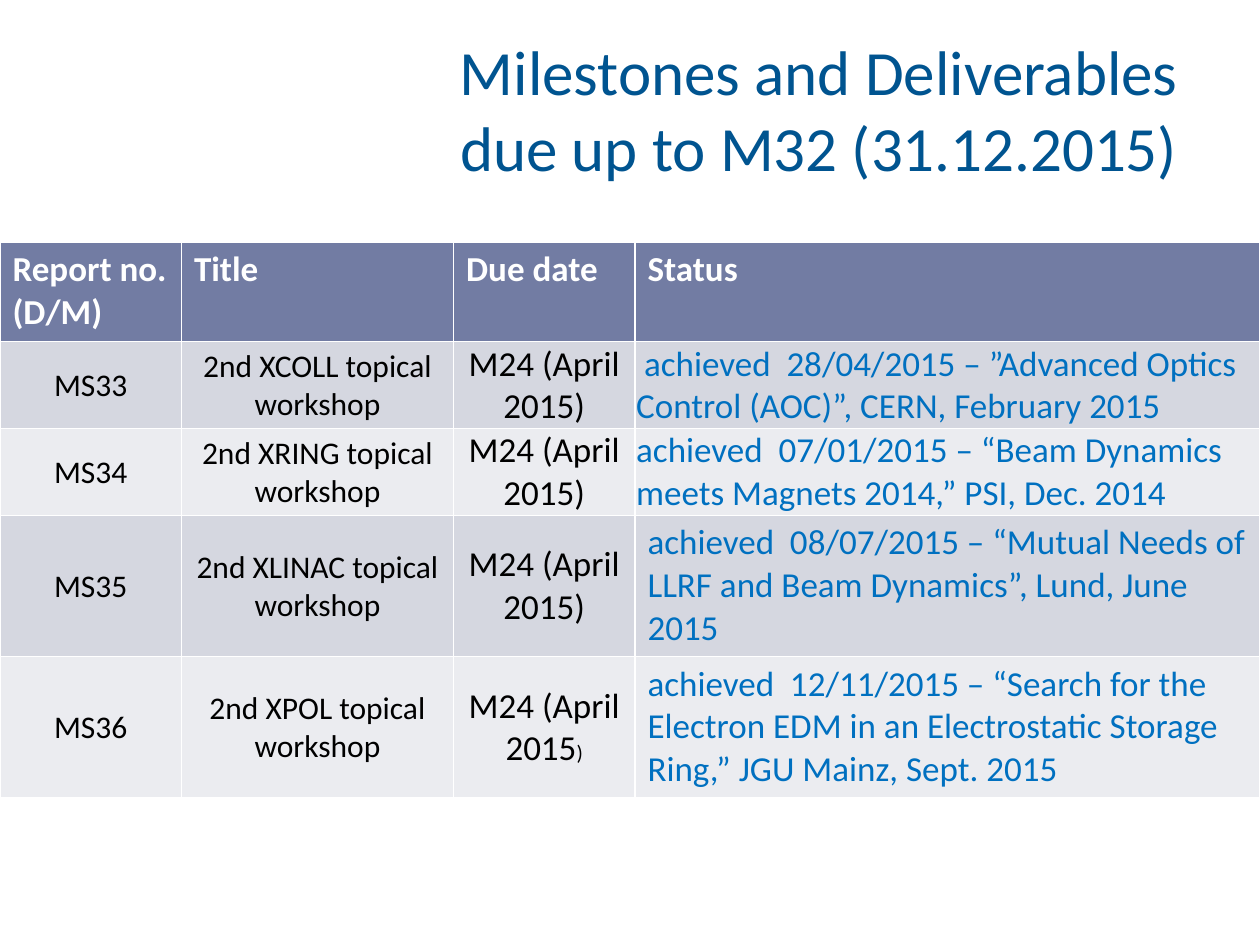
from dataclasses import dataclass

from pptx import Presentation
from pptx.dml.color import RGBColor
from pptx.enum.text import MSO_ANCHOR as Anchor, PP_ALIGN as Align
from pptx.util import Inches, Pt

FONT = "Calibri"
HEADINGS = ["Report no. (D/M)", "Title", "Due date", "Status"]
COLUMN_WIDTHS = [1.44, 2.16, 1.44, 4.96]
HEADER_HEIGHT = 0.79
HEADER_FILL = "727CA3"
BAND_FILLS = ["D5D7E0", "EBECF0"]


@dataclass
class Milestone:
    number: str
    workshop: str
    status: str
    height: float
    compact: bool = False
    closing_size: int = 20


@dataclass
class TextStyle:
    size: int
    color: str
    bold: bool = False
    align: Align = Align.LEFT


TITLE = TextStyle(36, "005490", align=Align.CENTER)
HEADING = TextStyle(20, "FFFFFF", bold=True)
LABEL = TextStyle(18, "000000", align=Align.CENTER)
DUE_DATE = TextStyle(20, "000000", align=Align.CENTER)
STATUS = TextStyle(20, "0070C0")

MILESTONES = [
    Milestone("MS33", "XCOLL",
              " achieved  28/04/2015 – ”Advanced Optics Control (AOC)”, "
              "CERN, February 2015", 0.69, compact=True),
    Milestone("MS34", "XRING",
              "achieved  07/01/2015 – “Beam Dynamics meets Magnets 2014,” "
              "PSI, Dec. 2014", 0.69, compact=True),
    Milestone("MS35", "XLINAC",
              "achieved  08/07/2015 – “Mutual Needs of LLRF and Beam Dynamics”, "
              "Lund, June 2015", 1.12),
    Milestone("MS36", "XPOL",
              "achieved  12/11/2015 – “Search for the Electron EDM in an "
              "Electrostatic Storage Ring,” JGU Mainz, Sept. 2015", 1.12,
              closing_size=12),
]


def rgb(color: str) -> RGBColor:
    return RGBColor.from_string(color)


def write(text_frame, text: str, style: TextStyle):
    paragraph = text_frame.paragraphs[0]
    paragraph.add_run().text = text
    paragraph.alignment = style.align
    font = paragraph.font
    font.name = FONT
    font.size = Pt(style.size)
    font.bold = style.bold
    font.color.rgb = rgb(style.color)
    for run in paragraph.runs:
        run.font.color.rgb = rgb(style.color)
        run.font.bold = style.bold
    return paragraph


def fill_cell(cell, text: str, style: TextStyle, fill: str, compact: bool = False):
    cell.fill.solid()
    cell.fill.fore_color.rgb = rgb(fill)
    if compact:
        cell.vertical_anchor = Anchor.MIDDLE
        cell.margin_left = cell.margin_right = cell.margin_top = Inches(0.01)
        cell.margin_bottom = 0
    return write(cell.text_frame, text, style)


def add_title(slide) -> None:
    shape = slide.shapes.add_textbox(
        Inches(3.25), Inches(0.3), Inches(6.5), Inches(1.12))
    shape.text_frame.word_wrap = True
    shape.text_frame.vertical_anchor = Anchor.MIDDLE
    write(shape.text_frame,
          "Milestones and Deliverables due up to M32 (31.12.2015)", TITLE)


def fill_milestone(table, row: int, milestone: Milestone) -> None:
    fill = BAND_FILLS[(row - 1) % 2]
    table.rows[row].height = Inches(milestone.height)
    fill_cell(table.cell(row, 0), milestone.number, LABEL, fill, True)
    fill_cell(table.cell(row, 1), f"2nd {milestone.workshop} topical workshop",
              LABEL, fill, True)
    due_date = "M24 (April 2015"
    if milestone.closing_size == DUE_DATE.size:
        fill_cell(table.cell(row, 2), due_date + ")", DUE_DATE, fill, True)
    else:
        paragraph = fill_cell(table.cell(row, 2), due_date, DUE_DATE, fill, True)
        closing = paragraph.add_run()
        closing.text = ")"
        closing.font.size = Pt(milestone.closing_size)
        closing.font.color.rgb = rgb(DUE_DATE.color)
    fill_cell(table.cell(row, 3), milestone.status, STATUS, fill, milestone.compact)


def add_milestone_table(slide) -> None:
    height = HEADER_HEIGHT + sum(milestone.height for milestone in MILESTONES)
    table = slide.shapes.add_table(
        len(MILESTONES) + 1, len(HEADINGS),
        Inches(0), Inches(1.92), Inches(10), Inches(height)).table
    table.rows[0].height = Inches(HEADER_HEIGHT)
    for column, (heading, width) in enumerate(zip(HEADINGS, COLUMN_WIDTHS)):
        table.columns[column].width = Inches(width)
        fill_cell(table.cell(0, column), heading, HEADING, HEADER_FILL)
    for row, milestone in enumerate(MILESTONES, start=1):
        fill_milestone(table, row, milestone)


def main() -> None:
    presentation = Presentation()
    presentation.slide_width = Inches(10)
    presentation.slide_height = Inches(7.5)
    slide = presentation.slides.add_slide(presentation.slide_layouts[6])
    add_title(slide)
    add_milestone_table(slide)
    presentation.save("out.pptx")


if __name__ == "__main__":
    main()
